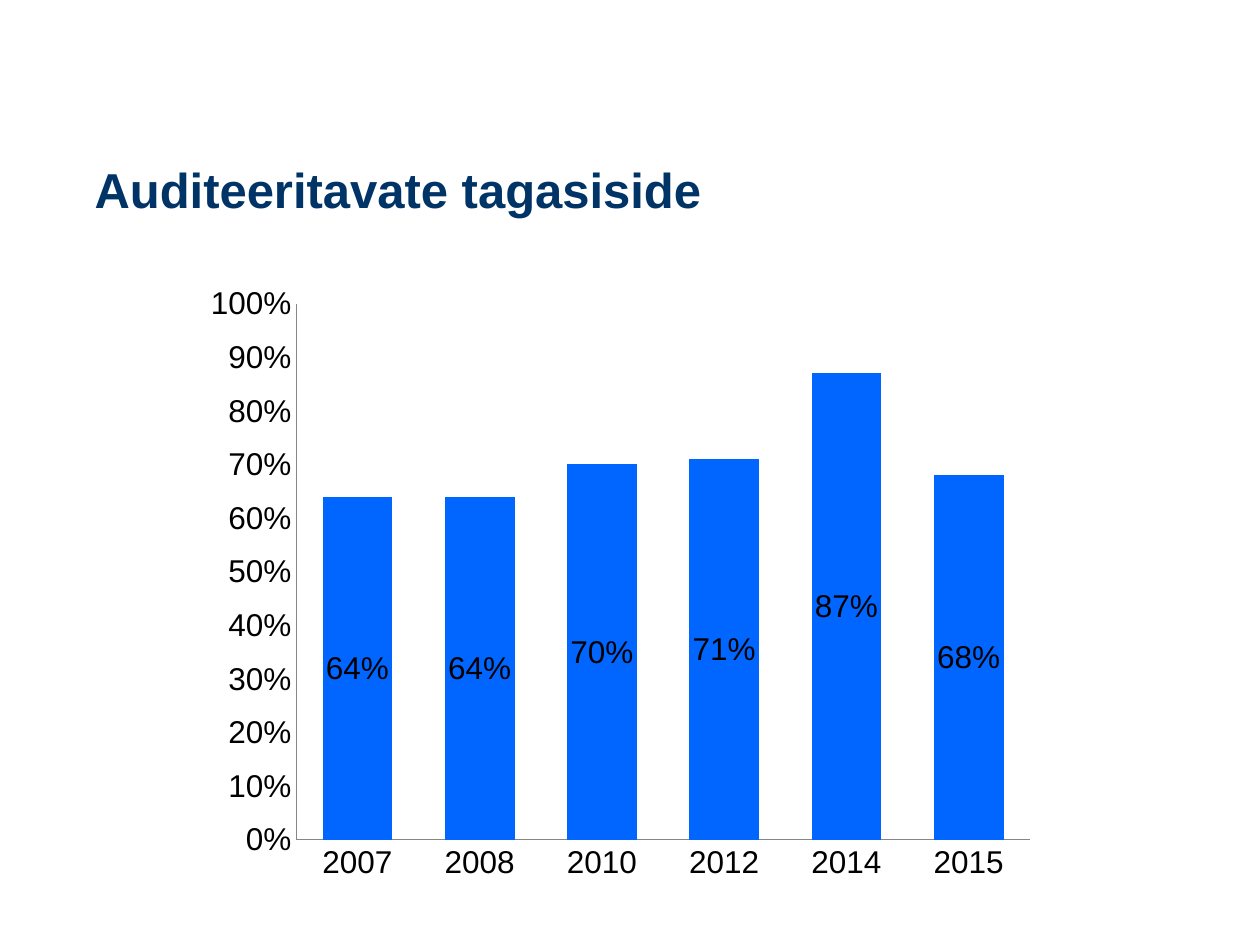
from lxml import etree
from pptx import Presentation
from pptx.chart.data import CategoryChartData
from pptx.dml.color import RGBColor
from pptx.enum.chart import XL_CHART_TYPE, XL_LABEL_POSITION, XL_TICK_MARK
from pptx.enum.text import MSO_ANCHOR, PP_ALIGN
from pptx.oxml.ns import qn
from pptx.util import Pt

PX = 914400 / 126
TITLE_ONLY = 5
STACKED = XL_CHART_TYPE.COLUMN_STACKED
CENTER = XL_LABEL_POSITION.CENTER
NO_TICK = XL_TICK_MARK.NONE
LEFT = PP_ALIGN.LEFT
MIDDLE = MSO_ANCHOR.MIDDLE

YEARS = ["2007", "2008", "2010", "2012", "2014", "2015"]
SHARES = [0.64, 0.64, 0.7, 0.71, 0.87, 0.68]
PLOT_AREA = {"x": 0.12, "y": 0.05, "w": 0.86, "h": 0.87}


def px(*lengths):
    return [round(length * PX) for length in lengths]


def color(value):
    return RGBColor.from_string(value)


def apply(target, values):
    for name, value in values.items():
        setattr(target, name, value)


class SlideBuilder:
    font_name = "Arial"
    title_color = "003366"
    text_color = "000000"
    bar_color = "0066FF"
    axis_color = "868686"

    def __init__(self, deck):
        self.slide = deck.slides.add_slide(deck.slide_layouts[TITLE_ONLY])

    def style_font(self, font, size, font_color, bold=False):
        apply(font, {"name": self.font_name, "size": Pt(size), "bold": bold})
        font.color.rgb = color(font_color)

    def title(self, text, *place):
        box = self.slide.shapes.title
        apply(box, dict(zip(("left", "top", "width", "height"), px(*place))))
        apply(box.text_frame, {"word_wrap": True, "vertical_anchor": MIDDLE})
        para = box.text_frame.paragraphs[0]
        para.alignment = LEFT
        span = para.add_run()
        span.text = text
        self.style_font(span.font, 28, self.title_color, True)

    def place_plot(self, chart, area):
        plot_area = chart.plots[0]._element.getparent()
        for old_layout in plot_area.findall(qn("c:layout")):
            plot_area.remove(old_layout)
        layout = etree.Element(qn("c:layout"))
        manual = etree.SubElement(layout, qn("c:manualLayout"))
        settings = {"layoutTarget": "inner", "xMode": "edge", "yMode": "edge", **area}
        for name, value in settings.items():
            etree.SubElement(manual, qn(f"c:{name}"), val=str(value))
        plot_area.insert(0, layout)

    def column_chart(self, categories, values, *place):
        data = CategoryChartData(number_format="0%")
        data.categories = categories
        data.add_series("Series 1", values)
        chart = self.slide.shapes.add_chart(STACKED, *px(*place), data).chart
        apply(chart, {"has_legend": False, "has_title": False})
        self.style_font(chart.font, 18, self.text_color)

        plot = chart.plots[0]
        apply(plot, {"gap_width": 75, "overlap": 100,
                     "vary_by_categories": False, "has_data_labels": True})
        apply(plot.data_labels, {"show_value": True, "position": CENTER,
                                 "number_format": "0%", "number_format_is_linked": False})
        self.style_font(plot.data_labels.font, 18, self.text_color)
        fill = plot.series[0].format.fill
        fill.solid()
        fill.fore_color.rgb = color(self.bar_color)

        for axis in (chart.category_axis, chart.value_axis):
            apply(axis, {"major_tick_mark": NO_TICK, "minor_tick_mark": NO_TICK,
                         "has_major_gridlines": False})
            axis.format.line.color.rgb = color(self.axis_color)
            axis.format.line.width = Pt(0.75)
        apply(chart.value_axis, {"minimum_scale": 0, "maximum_scale": 1, "major_unit": 0.1})
        apply(chart.value_axis.tick_labels,
              {"number_format": "0%", "number_format_is_linked": False})
        self.place_plot(chart, PLOT_AREA)


def main():
    deck = Presentation()
    deck.slide_width, deck.slide_height = px(1260, 945)
    builder = SlideBuilder(deck)
    builder.title("Auditeeritavate tagasiside", 82, 126, 1071, 126)
    builder.column_chart(YEARS, SHARES, 194, 273, 853, 616)
    deck.save("out.pptx")


if __name__ == "__main__":
    main()
